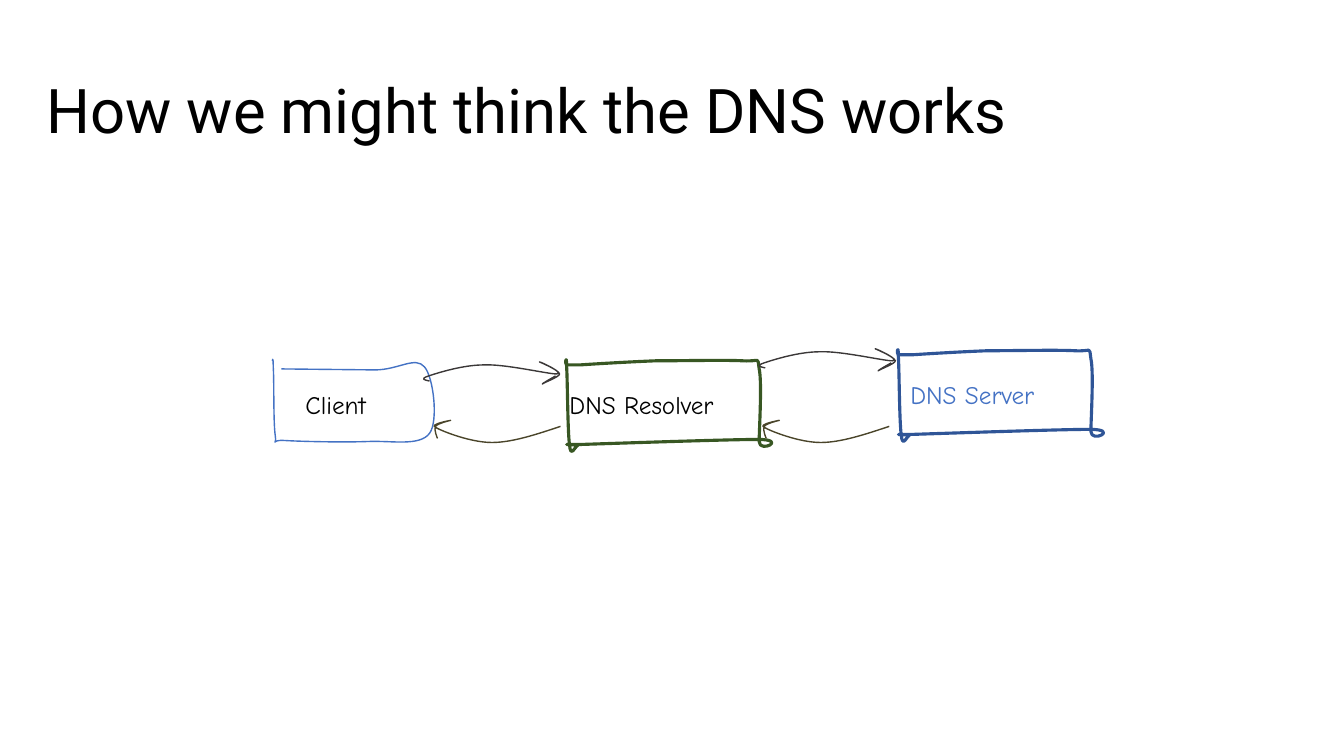
from lxml.etree import SubElement
from pptx import Presentation
from pptx.dml.color import RGBColor
from pptx.enum.text import MSO_ANCHOR, MSO_AUTO_SIZE
from pptx.oxml.ns import qn
from pptx.util import Pt

PX = 9144
BLACK = RGBColor(0x00, 0x00, 0x00)
BLUE = RGBColor(0x44, 0x72, 0xC4)
DARK_BLUE = RGBColor(0x2F, 0x55, 0x97)
GREEN = RGBColor(0x38, 0x57, 0x23)
GRAY = RGBColor(0x3B, 0x38, 0x38)
OLIVE = RGBColor(0x4A, 0x45, 0x2A)

CLIENT_BOX = (161, 82, [
    (9, 10), (102, 11),
    (125, 11, 142, -3, 151, 8), (160, 18, 165, 62, 156, 74),
    (146, 87, 119, 81, 95, 82), (71, 83, 28, 82, 12, 81),
    (-3, 80, 5, 88, 3, 76), (1, 63, 2, 20, 1, 8), (1, -4, 0, 2, 0, 2),
])
SERVER_BOX = (204, 91, [
    (15, 6), (30, 5, 63, 3, 89, 2), (116, 2, 159, 1, 176, 2),
    (194, 3, 190, -3, 192, 10), (195, 23, 192, 71, 192, 82),
    (192, 94, 221, 80, 191, 80), (162, 80, 45, 84, 15, 85),
    (-15, 85, 13, 85, 12, 86), (10, 86, 5, 99, 4, 86),
    (2, 73, 2, 20, 1, 7), (1, -7, -1, 6, 1, 6), (4, 6, 0, 6, 15, 6),
])
REQUEST_ARROW = (135, 21, [
    (6, 19), (1, 18, -4, 17, 5, 14), (14, 11, 39, 3, 60, 3),
    (81, 2, 123, 12, 132, 12), (141, 11, 115, 0, 115, 0),
    (116, 0, 134, 8, 135, 12), (135, 15, 118, 21, 118, 22),
    (117, 22, 124, 18, 131, 14),
])
REPLY_ARROW = (126, 21, [
    (125, 6), (101, 14, 77, 22, 57, 22), (36, 22, 8, 11, 1, 7),
    (-6, 4, 16, 0, 16, 0), (16, 0, 3, 3, 1, 6),
    (-1, 9, 3, 18, 3, 18), (3, 18),
])

deck = Presentation()
deck.slide_width = 1333 * PX
deck.slide_height = 750 * PX
page = deck.slides.add_slide(deck.slide_layouts[6])


def draw_sketch(outline, left, top, color, width):
    extent_x, extent_y, segments = outline
    builder = page.shapes.build_freeform(left, top, scale=PX)
    builder.add_line_segments([(left + extent_x, top + extent_y)], close=False)
    sketch = builder.convert_to_shape()
    sketch.shadow.inherit = False
    sketch.fill.background()
    sketch.line.color.rgb = color
    sketch.line.width = Pt(width)
    route = next(sketch.element.iter(qn("a:path")))
    for child in list(route):
        route.remove(child)
    for index, segment in enumerate(segments):
        tag = "a:moveTo" if index == 0 else "a:lnTo" if len(segment) == 2 else "a:cubicBezTo"
        command = SubElement(route, qn(tag))
        for x, y in zip(segment[::2], segment[1::2]):
            SubElement(command, qn("a:pt"), x=str(x), y=str(y))
    if segments[-1][-2:] == segments[0]:
        SubElement(route, qn("a:close"))


def add_text(text, left, top, width, height, font, size, color):
    box = page.shapes.add_textbox(left * PX, top * PX, width * PX, height * PX)
    box.text_frame.text = text
    box.text_frame.word_wrap = False
    box.text_frame.auto_size = MSO_AUTO_SIZE.SHAPE_TO_FIT_TEXT
    span = box.text_frame.paragraphs[0].runs[0]
    span.font.name = font
    span.font.size = Pt(size)
    span.font.color.rgb = color
    return box.text_frame


title = add_text("How we might think the DNS works", 36, 40, 1206, 145, "Roboto", 44, BLACK)
title.word_wrap = True
title.auto_size = MSO_AUTO_SIZE.NONE
title.vertical_anchor = MSO_ANCHOR.MIDDLE
title.paragraphs[0].line_spacing = 0.9

draw_sketch(CLIENT_BOX, 270, 356, BLUE, 1)
add_text("Client", 293, 381, 102, 40, "Comic Neue", 18, BLACK)
draw_sketch(SERVER_BOX, 561, 356, GREEN, 2.25)
add_text("DNS Resolver", 555, 381, 207, 40, "Comic Neue", 18, BLACK)

for arrow, left, top, color in [
    (REQUEST_ARROW, 420, 359, GRAY),
    (REQUEST_ARROW, 753, 346, GRAY),
    (REPLY_ARROW, 431, 417, OLIVE),
    (REPLY_ARROW, 757, 417, OLIVE),
]:
    draw_sketch(arrow, left, top, color, 1)

draw_sketch(SERVER_BOX, 890, 346, DARK_BLUE, 2.25)
add_text("DNS Server", 893, 371, 184, 40, "Comic Neue", 18, BLUE)

deck.save("out.pptx")
